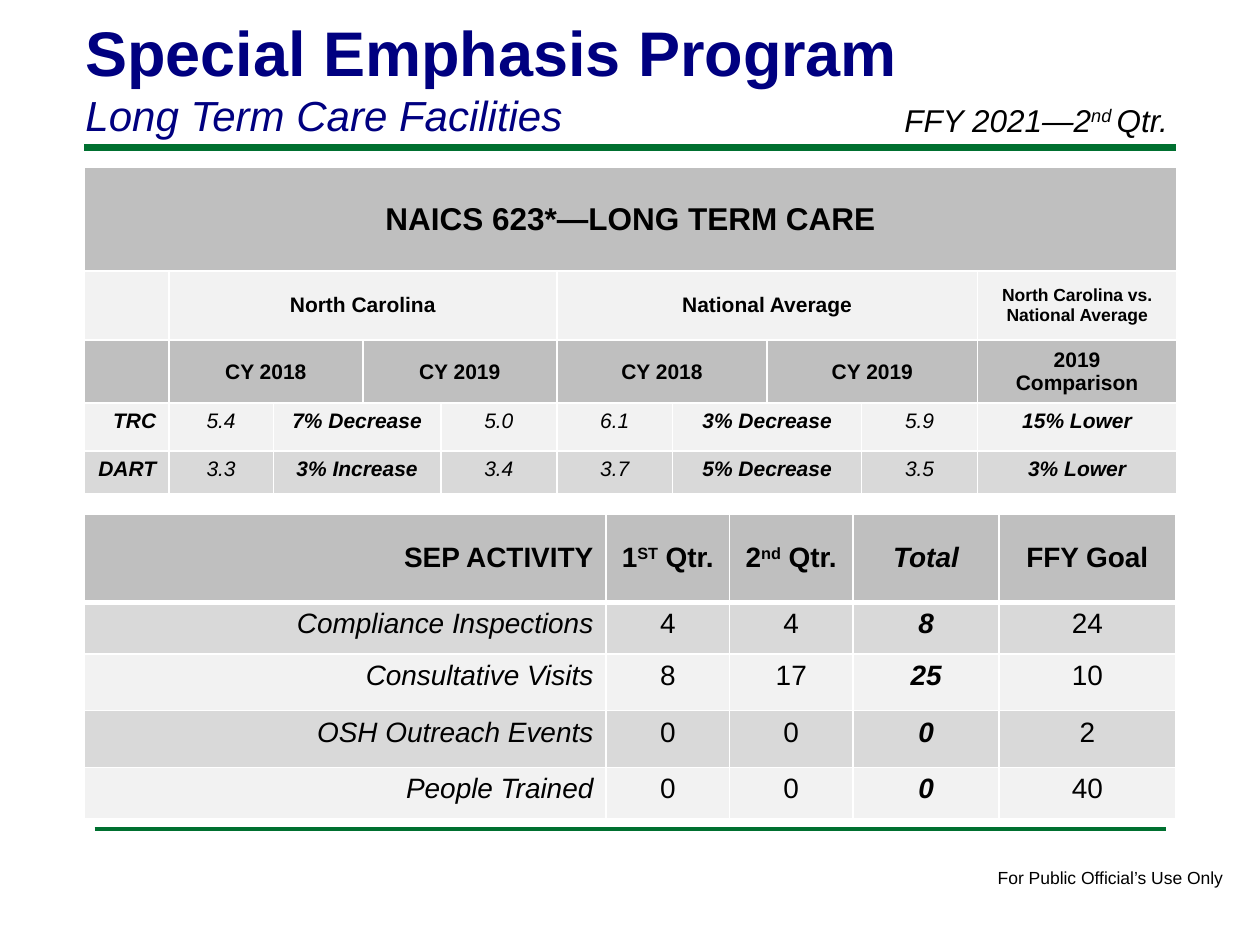
from lxml import etree
from pptx import Presentation
from pptx.dml.color import RGBColor
from pptx.enum.shapes import MSO_CONNECTOR
from pptx.enum.text import MSO_ANCHOR, PP_ALIGN
from pptx.oxml.ns import qn
from pptx.util import Inches, Pt

CENTER, RIGHT = PP_ALIGN.CENTER, PP_ALIGN.RIGHT
MIDDLE, TOP = MSO_ANCHOR.MIDDLE, MSO_ANCHOR.TOP
STRAIGHT = MSO_CONNECTOR.STRAIGHT
FONT = "Arial"
COLORS = {
    "green": "007030",
    "navy": "000080",
    "black": "000000",
    "white": "FFFFFF",
    "header": "BFBFBF",
    "band": "D9D9D9",
    "light": "F2F2F2",
}

# Each cell is (text, columns spanned); ^ marks enclose a superscript
RATE_COLUMNS = [0.67, 0.83, 0.71, 0.62, 0.92, 0.92, 0.75, 0.75, 0.92, 1.58]
RATE_HEADERS = [
    [("NAICS 623*—LONG TERM CARE", 10)],
    [("", 1), ("North Carolina", 4), ("National Average", 4),
     ("North Carolina vs. National Average", 1)],
    [("", 1), ("CY 2018", 2), ("CY 2019", 2), ("CY 2018", 2), ("CY 2019", 2),
     ("2019 Comparison", 1)],
]
RATE_SPANS = [1, 1, 2, 1, 1, 2, 1, 1]
RATES = [
    ["TRC", "5.4", "7% Decrease", "5.0", "6.1", "3% Decrease", "5.9", "15% Lower"],
    ["DART", "3.3", "3% Increase", "3.4", "3.7", "5% Decrease", "3.5", "3% Lower"],
]
ACTIVITY_COLUMNS = [4.14, 0.98, 0.98, 1.16, 1.4]
ACTIVITY = [
    ["SEP ACTIVITY", "1^ST^ Qtr.", "2^nd^ Qtr.", "Total", "FFY Goal"],
    ["Compliance Inspections", "4", "4", "8", "24"],
    ["Consultative Visits", "8", "17", "25", "10"],
    ["OSH Outreach Events", "0", "0", "0", "2"],
    ["People Trained", "0", "0", "0", "40"],
]


def rgb(name):
    return RGBColor.from_string(COLORS[name])


def write(para, text, size, color="black", bold=False, italic=False):
    for index, part in enumerate(text.split("^")):
        span = para.add_run()
        span.text = part
        font = span.font
        font.name, font.size, font.bold, font.italic = FONT, Pt(size), bold, italic
        font.color.rgb = rgb(color)
        if index % 2:
            font._element.set("baseline", "30000")


def add_text(page, left, top, width, height, wrap=True):
    box = page.shapes.add_textbox(Inches(left), Inches(top), Inches(width), Inches(height))
    box.text_frame.word_wrap = wrap
    return box.text_frame


def add_rule(page, left, right, y, weight):
    rule = page.shapes.add_connector(
        STRAIGHT, Inches(left), Inches(y), Inches(right), Inches(y))
    rule.line.color.rgb = rgb("green")
    rule.line.width = Pt(weight)
    etree.SubElement(rule._element.spPr, qn("a:effectLst"))


def add_table(page, left, top, columns, rows):
    frame = page.shapes.add_table(
        len(rows), len(columns), Inches(left), Inches(top),
        Inches(sum(columns)), Inches(sum(rows)))
    table = frame.table
    table.first_row = table.horz_banding = False
    for column, width in zip(table.columns, columns):
        column.width = Inches(width)
    for row, height in zip(table.rows, rows):
        row.height = Inches(height)
    return table


def paint_cell(cell, fill, bottom=1):
    properties = cell._tc.get_or_add_tcPr()
    for side in "LRTB":
        line = etree.SubElement(properties, qn(f"a:ln{side}"))
        line.set("w", str(Pt(bottom if side == "B" else 1)))
        solid = etree.SubElement(line, qn("a:solidFill"))
        etree.SubElement(solid, qn("a:srgbClr")).set("val", COLORS["white"])
    cell.fill.solid()
    cell.fill.fore_color.rgb = rgb(fill)


def fill_cell(cell, text, size, align=CENTER, anchor=TOP, bold=False, italic=False):
    cell.vertical_anchor = anchor
    para = cell.text_frame.paragraphs[0]
    para.alignment = align
    if text:
        write(para, text, size, bold=bold, italic=italic)


def add_rate_table(page):
    table = add_table(page, 0.67, 1.33, RATE_COLUMNS, [0.82, 0.55, 0.5, 0.38, 0.34])
    fills = ["header", "light", "header", "light", "band"]
    rows = RATE_HEADERS + [list(zip(values, RATE_SPANS)) for values in RATES]
    for row, (entries, fill) in enumerate(zip(rows, fills)):
        for column in range(len(RATE_COLUMNS)):
            paint_cell(table.cell(row, column), fill)
        is_header = row < len(RATE_HEADERS)
        column = 0
        for text, span in entries:
            cell = table.cell(row, column)
            if span > 1:
                cell.merge(table.cell(row, column + span - 1))
            column += span
            is_comparison = column == len(RATE_COLUMNS) and span == 1
            if is_comparison:
                cell.margin_left = cell.margin_right = Inches(0.12)
            size = 18 if row == 0 else 10 if row == 1 and is_comparison else 12
            is_label = not is_header and column == 1
            fill_cell(cell, text, size,
                      align=RIGHT if is_label else CENTER,
                      anchor=MIDDLE if is_header else TOP,
                      bold=is_header or is_label or span == 2 or is_comparison,
                      italic=not is_header)


def add_activity_table(page):
    table = add_table(page, 0.67, 4.08, ACTIVITY_COLUMNS, [0.7, 0.41, 0.45, 0.45, 0.41])
    for row, values in enumerate(ACTIVITY):
        is_header = row == 0
        fill = "header" if is_header else "band" if row % 2 else "light"
        for column, text in enumerate(values):
            cell = table.cell(row, column)
            is_label, is_total = column == 0, column == 3
            paint_cell(cell, fill, bottom=3 if is_header else 1)
            fill_cell(cell, text, 16,
                      align=RIGHT if is_label else CENTER,
                      anchor=MIDDLE if is_header else TOP,
                      bold=is_header or is_total,
                      italic=is_total or (is_label and not is_header))


def main():
    deck = Presentation()
    deck.slide_width, deck.slide_height = Inches(10), Inches(7.5)
    page = deck.slides.add_slide(deck.slide_layouts[6])

    # Rules and footer
    add_rule(page, 0.67, 9.33, 1.17, 4)
    add_rule(page, 0.75, 9.25, 6.58, 2)
    footer = add_text(page, 7.82, 6.83, 2.01, 0.27, wrap=False)
    write(footer.paragraphs[0], "For Public Official’s Use Only", 10)

    # Title and reporting period
    title = add_text(page, 0.58, 0.06, 8.25, 1.11)
    write(title.paragraphs[0], "Special Emphasis Program", 36, "navy", bold=True)
    write(title.add_paragraph(), "Long Term Care Facilities", 24, "navy", italic=True)
    period = add_text(page, 7.08, 0.75, 2.5, 0.4)
    write(period.paragraphs[0], "FFY 2021—2^nd ^Qtr.", 18, italic=True)

    # Tables
    add_activity_table(page)
    add_rate_table(page)

    deck.save("out.pptx")


if __name__ == "__main__":
    main()
